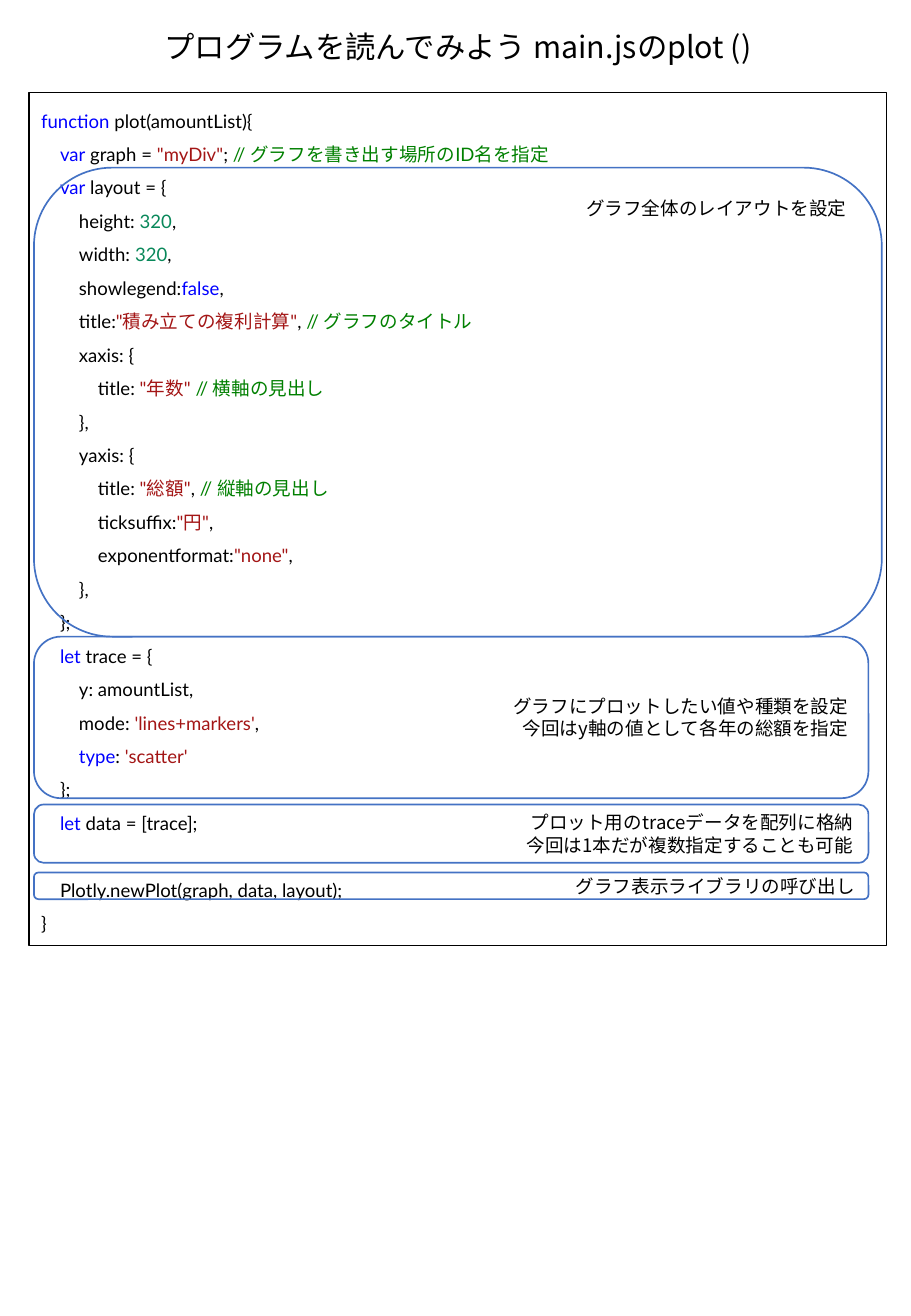
from lxml import etree
from pptx import Presentation
from pptx import util as u
from pptx.dml.color import RGBColor
from pptx.enum import shapes, text
from pptx.oxml.ns import qn

INK, KEYWORD, STRING, NUMBER, COMMENT = "000000", "0000FF", "A31515", "09885A", "008000"
PAPER, ACCENT = "FFFFFF", "4472C4"
CODE_FONT, JAPANESE_FONT = "Lato", "Noto Sans CJK JP"

CODE = [
    (0, [("function", KEYWORD), (" plot(amountList){", INK)]),
    (1, [("var", KEYWORD), (" graph = ", INK), ('"myDiv"', STRING), ("; ", INK),
         ("// グラフを書き出す場所のID名を指定", COMMENT)]),
    (1, [("var", KEYWORD), (" layout = {", INK)]),
    (2, [("height: ", INK), ("320", NUMBER), (",", INK)]),
    (2, [("width: ", INK), ("320", NUMBER), (",", INK)]),
    (2, [("showlegend:", INK), ("false", KEYWORD), (",", INK)]),
    (2, [("title:", INK), ('"積み立ての複利計算"', STRING), (", ", INK),
         ("// グラフのタイトル", COMMENT)]),
    (2, [("xaxis: {", INK)]),
    (3, [("title: ", INK), ('"年数" ', STRING), ("// 横軸の見出し", COMMENT)]),
    (2, [("},", INK)]),
    (2, [("yaxis: {", INK)]),
    (3, [("title: ", INK), ('"総額"', STRING), (", ", INK), ("// 縦軸の見出し", COMMENT)]),
    (3, [("ticksuffix:", INK), ('"円"', STRING), (",", INK)]),
    (3, [("exponentformat:", INK), ('"none"', STRING), (",", INK)]),
    (2, [("},", INK)]),
    (1, [("};", INK)]),
    (1, [("let", KEYWORD), (" trace = {", INK)]),
    (2, [("y: amountList,", INK)]),
    (2, [("mode: ", INK), ("'lines+markers'", STRING), (",", INK)]),
    (2, [("type", KEYWORD), (": ", INK), ("'scatter'", STRING)]),
    (1, [("};", INK)]),
    (1, [("let", KEYWORD), (" data = [trace];", INK)]),
    (1, [("Plotly.newPlot(graph, data, layout);", INK)]),
    (0, [("}", INK)]),
]
LIBRARY_CALL = 22

NOTES = [
    ((3.73, 66.3, 91.6, 2.03), text.MSO_ANCHOR.MIDDLE, ["グラフ表示ライブラリの呼び出し"]),
    ((3.73, 48.38, 91.6, 12.28), text.MSO_ANCHOR.MIDDLE,
     ["グラフにプロットしたい値や種類を設定", "今回はy軸の値として各年の総額を指定"]),
    ((3.73, 12.74, 93.07, 35.64), text.MSO_ANCHOR.TOP, ["グラフ全体のレイアウトを設定"]),
    ((3.73, 61.13, 91.6, 4.43), text.MSO_ANCHOR.MIDDLE,
     ["プロット用のtraceデータを配列に格納", "今回は1本だが複数指定することも可能"]),
]


def colour(value):
    return RGBColor.from_string(value)


class CodeSheet:
    """Draws an annotated code listing, with places in percent of the slide."""

    text_size = u.Pt(11)
    title_size = u.Pt(18)
    indent = u.Inches(0.156)
    blank_line = u.Pt(19.8)

    def __init__(self):
        self.deck = Presentation()
        self.deck.slide_width, self.deck.slide_height = u.Inches(7.5), u.Inches(10.83)
        self.slide = self.deck.slides.add_slide(self.deck.slide_layouts[6])

    def place(self, area):
        sides = (self.deck.slide_width, self.deck.slide_height) * 2
        return [round(side * share / 100) for side, share in zip(sides, area)]

    def box(self, preset, area, line, anchor, fill=None):
        box = self.slide.shapes.add_shape(preset, *self.place(area))
        box.shadow.inherit = False
        if fill:
            box.fill.solid()
            box.fill.fore_color.rgb = colour(fill)
        else:
            box.fill.background()
        box.line.color.rgb = colour(line)
        box.line.width = u.Pt(1)
        box.text_frame.word_wrap = True
        box.text_frame.vertical_anchor = anchor
        return box.text_frame

    def fill_text(self, frame, lines, font, size, **layout):
        for number, runs in enumerate(lines):
            paragraph = frame.add_paragraph() if number else frame.paragraphs[0]
            for name, value in layout.items():
                setattr(paragraph, name, value)
            for wording, ink in runs:
                run = paragraph.add_run()
                run.text = wording
                for name, value in {"name": font, "size": size}.items():
                    setattr(run.font, name, value)
                run.font.color.rgb = colour(ink)
                east_asian = etree.SubElement(run.font._element, qn("a:ea"))
                east_asian.set("typeface", JAPANESE_FONT)

    def title(self, area, wording):
        frame = self.slide.shapes.add_textbox(*self.place(area)).text_frame
        frame.word_wrap = True
        self.fill_text(frame, [[(wording, INK)]], JAPANESE_FONT, self.title_size,
                       alignment=text.PP_ALIGN.CENTER)

    def listing(self, area, code, spaced_line):
        frame = self.box(shapes.MSO_SHAPE.RECTANGLE, area, INK, text.MSO_ANCHOR.TOP, PAPER)
        self.fill_text(frame, [runs for _, runs in code], CODE_FONT, self.text_size,
                       alignment=text.PP_ALIGN.LEFT, line_spacing=1.5)
        for paragraph, (depth, _) in zip(frame.paragraphs, code):
            paragraph._p.get_or_add_pPr().set("marL", str(depth * self.indent))
        frame.paragraphs[spaced_line].space_before = self.blank_line

    def note(self, area, anchor, lines):
        frame = self.box(shapes.MSO_SHAPE.ROUNDED_RECTANGLE, area, ACCENT, anchor)
        self.fill_text(frame, [[(line, INK)] for line in lines], JAPANESE_FONT, self.text_size,
                       alignment=text.PP_ALIGN.RIGHT)


def main():
    sheet = CodeSheet()
    sheet.listing((3.2, 7.02, 94.13, 64.82), CODE, LIBRARY_CALL)
    sheet.title((3.2, 1.66, 94.13, 3.69), "プログラムを読んでみよう main.jsのplot ()")
    for area, anchor, lines in NOTES:
        sheet.note(area, anchor, lines)
    sheet.deck.save("out.pptx")


if __name__ == "__main__":
    main()
